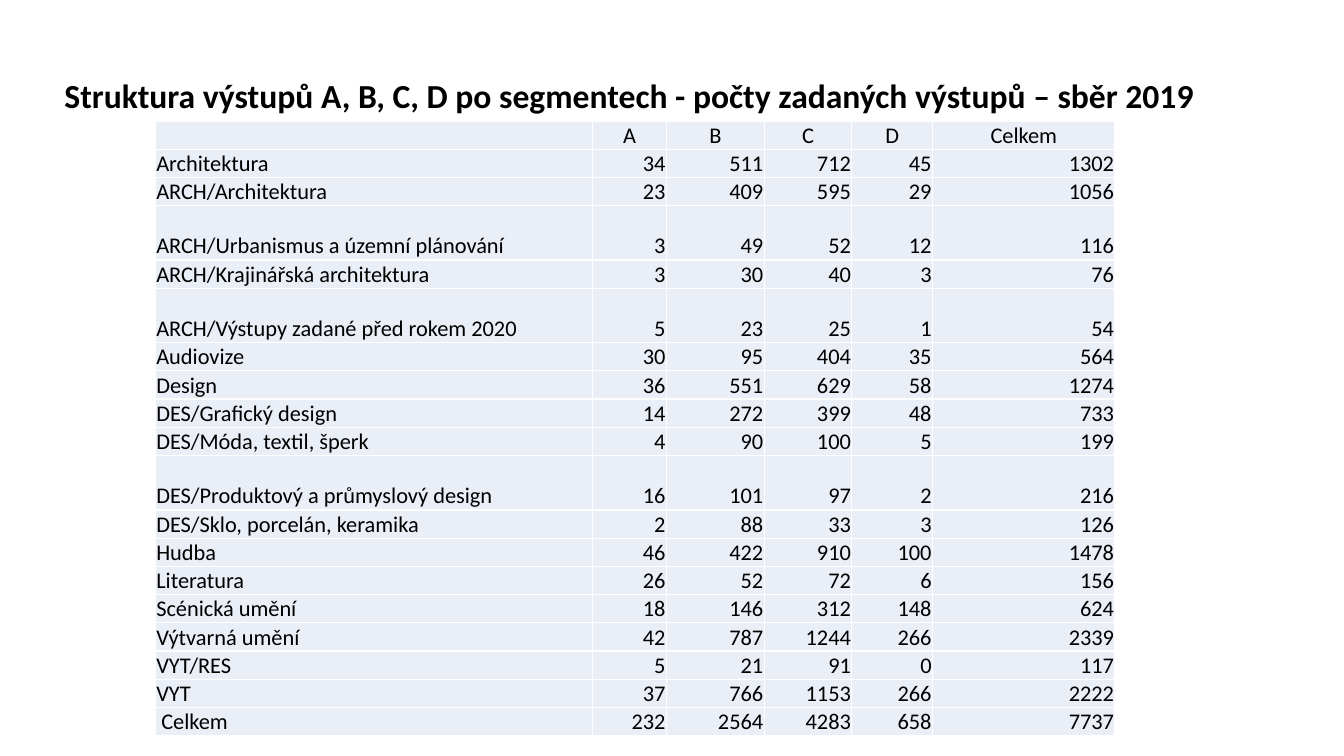
"""Builds the slide with output counts by segment for the 2019 collection."""
from dataclasses import dataclass

from lxml.etree import SubElement
from pptx import Presentation
from pptx.dml.color import RGBColor
from pptx.enum.text import MSO_ANCHOR, PP_ALIGN
from pptx.oxml.ns import qn
from pptx.util import Inches, Pt

TITLE = "Struktura výstupů A, B, C, D po segmentech - počty zadaných výstupů – sběr 2019"
HEADINGS = ("", "A", "B", "C", "D", "Celkem")
SEGMENTS = [
    ("Architektura", 34, 511, 712, 45, 1302),
    ("ARCH/Architektura", 23, 409, 595, 29, 1056),
    ("ARCH/Urbanismus a územní plánování", 3, 49, 52, 12, 116),
    ("ARCH/Krajinářská architektura", 3, 30, 40, 3, 76),
    ("ARCH/Výstupy zadané před rokem 2020", 5, 23, 25, 1, 54),
    ("Audiovize", 30, 95, 404, 35, 564),
    ("Design", 36, 551, 629, 58, 1274),
    ("DES/Grafický design", 14, 272, 399, 48, 733),
    ("DES/Móda, textil, šperk", 4, 90, 100, 5, 199),
    ("DES/Produktový a průmyslový design", 16, 101, 97, 2, 216),
    ("DES/Sklo, porcelán, keramika", 2, 88, 33, 3, 126),
    ("Hudba", 46, 422, 910, 100, 1478),
    ("Literatura", 26, 52, 72, 6, 156),
    ("Scénická umění", 18, 146, 312, 148, 624),
    ("Výtvarná umění", 42, 787, 1244, 266, 2339),
    ("VYT/RES", 5, 21, 91, 0, 117),
    ("VYT", 37, 766, 1153, 266, 2222),
    (" Celkem", 232, 2564, 4283, 658, 7737),
]
COLUMN_WIDTHS = (4.34, 0.73, 0.97, 0.87, 0.8, 1.81)
ROW_HEIGHT, TALL_ROW_HEIGHT = 0.28, 0.54
TALL_ROWS = (3, 5, 10)


@dataclass(frozen=True)
class Theme:
    """Colours, font and type sizes."""
    font: str = "Calibri"
    ink: str = "000000"
    cell: str = "EAEFF7"
    rule: str = "FFFFFF"
    title_size: int = 24
    table_size: int = 16
    rule_width: int = 1


THEME = Theme()


def write(frame, text, size, align=PP_ALIGN.LEFT, bold=False, spacing=None):
    """Write one formatted paragraph into a text frame."""
    paragraph = frame.paragraphs[0]
    paragraph.alignment = align
    paragraph.line_spacing = spacing
    if not text:
        SubElement(paragraph._p, qn("a:endParaRPr"), sz=str(size * 100))
        return
    run = paragraph.add_run()
    run.text = text
    run.font.name = THEME.font
    run.font.size = Pt(size)
    run.font.bold = bold
    run.font.color.rgb = RGBColor.from_string(THEME.ink)


def style_cell(cell):
    """Give a cell its margins, rules and fill."""
    cell.margin_left = cell.margin_right = cell.margin_top = Inches(0.01)
    cell.margin_bottom = 0
    cell.vertical_anchor = MSO_ANCHOR.BOTTOM
    properties = cell._tc.get_or_add_tcPr()
    for side in ("a:lnL", "a:lnR", "a:lnT", "a:lnB"):
        rule = SubElement(properties, qn(side), w=str(Pt(THEME.rule_width)))
        SubElement(SubElement(rule, qn("a:solidFill")), qn("a:srgbClr"), val=THEME.rule)
    cell.fill.solid()
    cell.fill.fore_color.rgb = RGBColor.from_string(THEME.cell)


def add_title(slide):
    """Add the slide heading."""
    title = slide.shapes.add_textbox(Inches(0.54), Inches(0.4), Inches(11.88), Inches(1.14))
    title.text_frame.word_wrap = True
    title.text_frame.vertical_anchor = MSO_ANCHOR.MIDDLE
    write(title.text_frame, TITLE, THEME.title_size, bold=True, spacing=0.9)


def add_counts(slide):
    """Add the table of counts."""
    lines = [HEADINGS, *SEGMENTS]
    heights = [TALL_ROW_HEIGHT if i in TALL_ROWS else ROW_HEIGHT for i in range(len(lines))]
    counts = slide.shapes.add_table(
        len(lines), len(HEADINGS), Inches(1.54), Inches(1.2),
        Inches(sum(COLUMN_WIDTHS)), Inches(sum(heights))).table
    counts.first_row = counts.horz_banding = False
    for column, width in zip(counts.columns, COLUMN_WIDTHS):
        column.width = Inches(width)
    for i, (row, height, line) in enumerate(zip(counts.rows, heights, lines)):
        row.height = Inches(height)
        for j, (cell, value) in enumerate(zip(row.cells, line)):
            style_cell(cell)
            number_align = PP_ALIGN.RIGHT if i else PP_ALIGN.CENTER
            write(cell.text_frame, str(value), THEME.table_size,
                  align=number_align if j else PP_ALIGN.LEFT)


def main():
    """Build and save the presentation."""
    deck = Presentation()
    deck.slide_width, deck.slide_height = Inches(13.33), Inches(7.5)
    slide = deck.slides.add_slide(deck.slide_layouts[6])
    add_title(slide)
    add_counts(slide)
    deck.save("out.pptx")


if __name__ == "__main__":
    main()
